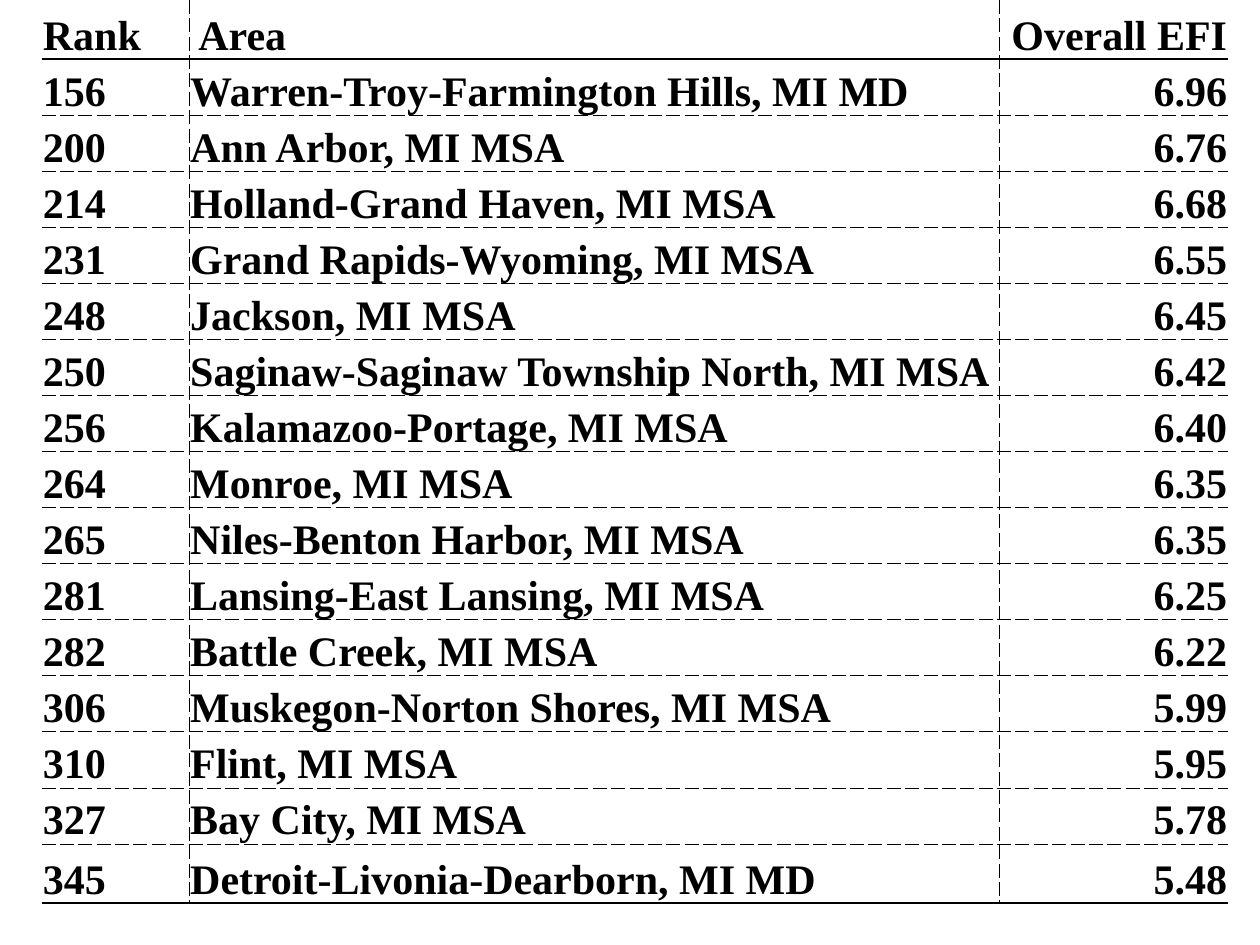
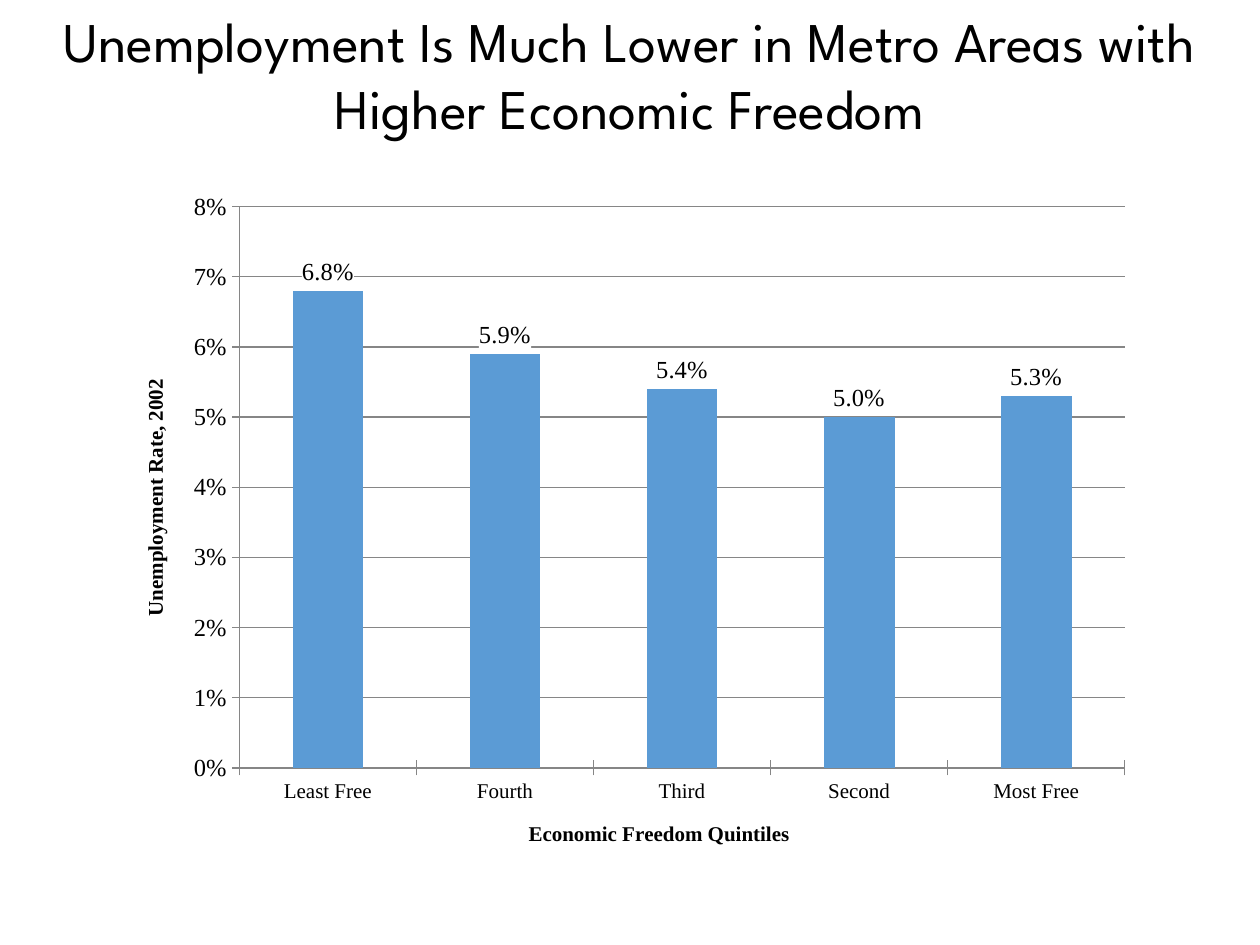
import pptx
import pptx.chart.data
import pptx.dml.color
import pptx.enum.chart
import pptx.enum.text
import pptx.oxml
import pptx.oxml.ns
import pptx.util

WIDE, HIGH = 10, 7.5
SERIF, SANS = "Times New Roman", "League Spartan"
BLACK, WHITE, GREY, BLUE = "000000", "FFFFFF", "868686", "5B9BD5"

HEAD = ("Rank", " Area", "Overall EFI")
AREAS = [
    ("156", "Warren-Troy-Farmington Hills, MI MD", "6.96"),
    ("200", "Ann Arbor, MI MSA", "6.76"),
    ("214", "Holland-Grand Haven, MI MSA", "6.68"),
    ("231", "Grand Rapids-Wyoming, MI MSA", "6.55"),
    ("248", "Jackson, MI MSA", "6.45"),
    ("250", "Saginaw-Saginaw Township North, MI MSA", "6.42"),
    ("256", "Kalamazoo-Portage, MI MSA", "6.40"),
    ("264", "Monroe, MI MSA", "6.35"),
    ("265", "Niles-Benton Harbor, MI MSA", "6.35"),
    ("281", "Lansing-East Lansing, MI MSA", "6.25"),
    ("282", "Battle Creek, MI MSA", "6.22"),
    ("306", "Muskegon-Norton Shores, MI MSA", "5.99"),
    ("310", "Flint, MI MSA", "5.95"),
    ("327", "Bay City, MI MSA", "5.78"),
    ("345", "Detroit-Livonia-Dearborn, MI MD", "5.48"),
]
COLS = (1.17, 6.43, 1.82)
LEFT, TALL, EDGE = 0.33, 7.17, 0.47

TITLE = "Unemployment Is Much Lower in Metro Areas with Higher Economic Freedom"
RATES = {"Least Free": 0.068, "Fourth": 0.059, "Third": 0.054,
         "Second": 0.05, "Most Free": 0.053}
CHART = (0.92, 1.42, 8.17, 5.5)
PLOT = {"x": 0.12, "y": 0.04, "w": 0.86, "h": 0.81}

inch = pptx.util.Inches
align = pptx.enum.text.PP_ALIGN
kinds = pptx.enum.chart


def tint(code):
    return pptx.dml.color.RGBColor.from_string(code)


def style(font, size, name=SERIF, bold=False):
    font.size, font.name, font.bold = pptx.util.Pt(size), name, bold
    font.color.rgb = tint(BLACK)


def write(para, text, side, *look):
    para.alignment = side
    run = para.add_run()
    run.text = text
    style(run.font, *look)


def node(tag, body, attrs=""):
    names = pptx.oxml.ns.nsdecls("a", "c")
    return pptx.oxml.parse_xml(f"<{tag} {names} {attrs}>{body}</{tag}>")


def fill(code):
    return f'<a:solidFill><a:srgbClr val="{code}"/></a:solidFill>'


def rule(cell, lines):
    props = cell._tc.get_or_add_tcPr()
    for spot, (side, line) in enumerate(zip("LRTB", lines)):
        if line:
            wide, dash = line
            body = fill(BLACK) + f'<a:prstDash val="{dash}"/>'
        else:
            wide, body = 0, "<a:noFill/>"
        props.insert(spot, node(f"a:ln{side}", body, f'w="{int(wide * 12700)}"'))


def rank(slide):
    rows = [HEAD] + AREAS
    last, end = len(rows) - 1, len(COLS) - 1
    table = slide.shapes.add_table(len(rows), len(COLS), inch(LEFT), 0,
                                   inch(sum(COLS)), inch(TALL)).table
    table.first_row = table.horz_banding = False
    inner = (TALL - 2 * EDGE) / (last - 1)
    thin, thick = (0.5, "dash"), (1, "solid")
    for col, wide in zip(table.columns, COLS):
        col.width = inch(wide)
    for r, row in enumerate(rows):
        table.rows[r].height = inch(EDGE if r in (0, last) else inner)
        above = (None, thick)[r] if r < 2 else thin
        below = thick if r in (0, last) else thin
        for c, text in enumerate(row):
            cell = table.cell(r, c)
            cell.fill.background()
            cell.vertical_anchor = pptx.enum.text.MSO_ANCHOR.BOTTOM
            cell.margin_left = cell.margin_right = cell.margin_top = inch(0.01)
            cell.margin_bottom = 0
            side = align.RIGHT if c == end else align.LEFT
            write(cell.text_frame.paragraphs[0], text, side, 24, SERIF, True)
            rule(cell, (thin if c else None, thin if c < end else None, above, below))


def axis(item, title, size):
    style(item.tick_labels.font, size)
    item.major_tick_mark = kinds.XL_TICK_MARK.CROSS
    item.minor_tick_mark = kinds.XL_TICK_MARK.NONE
    item.format.line.color.rgb = tint(GREY)
    write(item.axis_title.text_frame.paragraphs[0], title, align.CENTER, 12, SERIF, True)


def graph(slide):
    data = pptx.chart.data.CategoryChartData()
    data.categories = list(RATES)
    data.add_series("Series 1", list(RATES.values()))
    chart = slide.shapes.add_chart(kinds.XL_CHART_TYPE.COLUMN_CLUSTERED,
                                   *map(inch, CHART), data).chart
    chart.has_legend = chart.has_title = False
    style(chart.font, 10)

    axis(chart.category_axis, "Economic Freedom Quintiles", 12)
    rate = chart.value_axis
    axis(rate, "Unemployment Rate, 2002", 14)
    rate.minimum_scale, rate.maximum_scale, rate.major_unit = 0, 0.08, 0.01
    rate.tick_labels.number_format = "0%"
    rate.tick_labels.number_format_is_linked = False
    rate.major_gridlines.format.line.color.rgb = tint(GREY)

    plot = chart.plots[0]
    plot.gap_width, plot.vary_by_categories = 150, False
    bars = plot.series[0]
    bars.format.fill.solid()
    bars.format.fill.fore_color.rgb = tint(BLUE)
    tags = bars.data_labels
    tags.show_value = True
    tags.number_format, tags.number_format_is_linked = "0.0%", False
    tags.position = kinds.XL_LABEL_POSITION.OUTSIDE_END
    style(tags.font, 14)
    text = tags._element.find(pptx.oxml.ns.qn("c:txPr"))
    text.addprevious(node("c:spPr", fill(WHITE)))

    body = '<c:layoutTarget val="inner"/><c:xMode val="edge"/><c:yMode val="edge"/>'
    body += "".join(f'<c:{key} val="{val}"/>' for key, val in PLOT.items())
    area = chart._chartSpace.chart.plotArea
    for old in area.findall(pptx.oxml.ns.qn("c:layout")):
        area.remove(old)
    area.insert(0, node("c:layout", f"<c:manualLayout>{body}</c:manualLayout>"))


def head(slide):
    box = slide.shapes.add_textbox(0, 0, inch(WIDE), inch(1.18))
    frame = box.text_frame
    frame.word_wrap = True
    frame.auto_size = pptx.enum.text.MSO_AUTO_SIZE.SHAPE_TO_FIT_TEXT
    write(frame.paragraphs[0], TITLE, align.CENTER, 32, SANS)


def main():
    deck = pptx.Presentation()
    deck.slide_width, deck.slide_height = inch(WIDE), inch(HIGH)
    for parts in ((rank,), (graph, head)):
        slide = deck.slides.add_slide(deck.slide_layouts[6])
        slide.background.fill.solid()
        slide.background.fill.fore_color.rgb = tint(WHITE)
        for part in parts:
            part(slide)
    deck.save("out.pptx")


if __name__ == "__main__":
    main()
